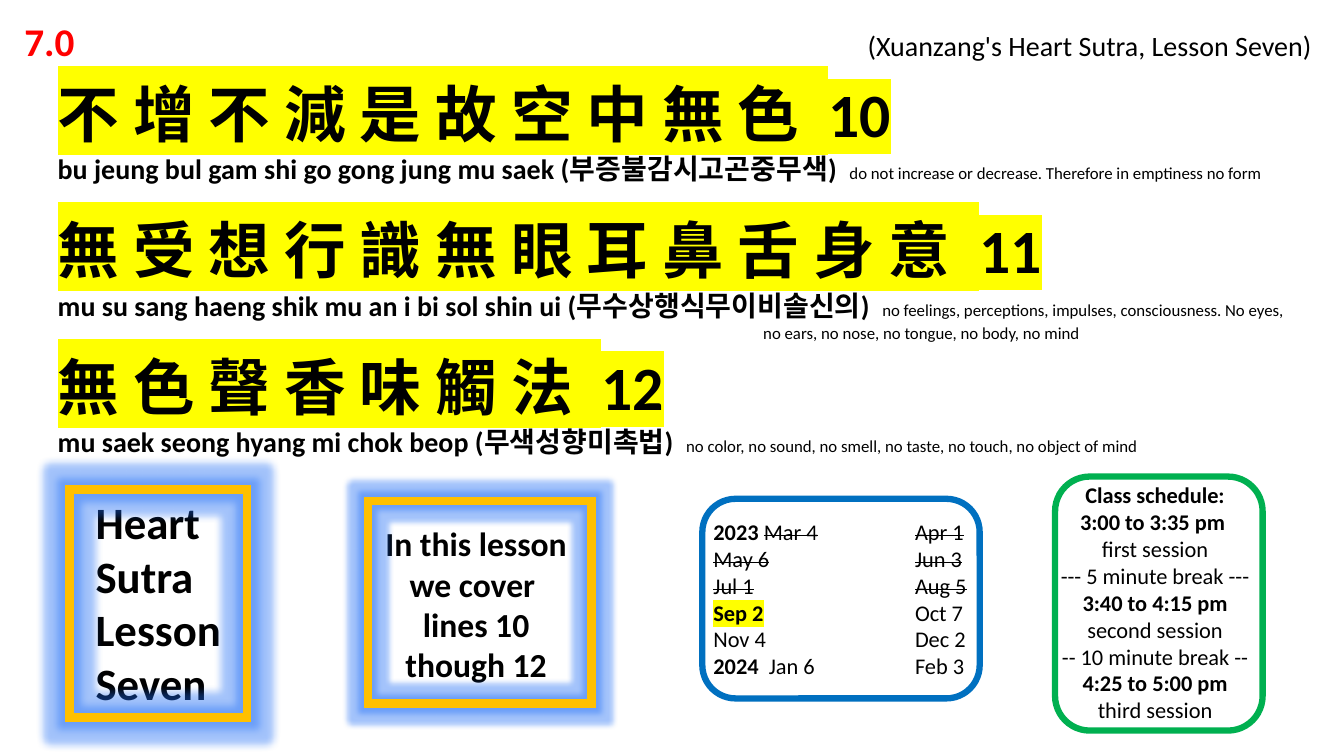
from dataclasses import dataclass
from typing import Optional

from lxml.etree import SubElement
from pptx import Presentation
from pptx.dml.color import RGBColor
from pptx.enum.shapes import MSO_SHAPE as Preset
from pptx.enum.text import MSO_ANCHOR as Anchor, MSO_AUTO_SIZE as AutoSize, PP_ALIGN as Align
from pptx.oxml.ns import qn
from pptx.util import Cm, Pt

COLORS = {"ink": "000000", "number": "FF0000", "marker": "FFFF00", "gold": "FFC000",
          "green": "00B050", "blue": "0070C0", "glow": "1A6AF5"}


@dataclass
class Box:
    left: float
    top: float
    width: float
    height: float

    def lengths(self) -> list:
        return [Cm(v) for v in (self.left, self.top, self.width, self.height)]


@dataclass
class Piece:
    text: str
    size: float
    bold: bool = False
    color: str = "ink"
    font: str = "Calibri"
    marked: bool = False
    struck: bool = False


@dataclass
class Line:
    pieces: list
    align: Align = Align.LEFT
    spacing: float = 1.0
    before: float = 0
    margin: Optional[float] = None
    tab: Optional[float] = None


@dataclass
class Verse:
    chinese: str
    sound: str
    hangul: str
    gloss: str
    gloss_end: str = ""
    before: float = 0


@dataclass
class Card:
    text_box: Box
    frame_box: Box
    preset: Preset
    color: str
    weight: float
    lines: list
    glow: float = 0


def add_piece(paragraph, piece: Piece) -> None:
    run = paragraph.add_run()
    run.text = piece.text
    font = run.font
    font.size, font.bold, font.name = Pt(piece.size), piece.bold, piece.font
    font.color.rgb = RGBColor.from_string(COLORS[piece.color])
    props = run._r.get_or_add_rPr()
    if piece.struck:
        props.set("strike", "sngStrike")
    if piece.marked:
        marker = SubElement(props, qn("a:highlight"))
        SubElement(marker, qn("a:srgbClr"), val=COLORS["marker"])
        props.find(qn("a:solidFill")).addnext(marker)


def write(frame, lines: list) -> None:
    frame.word_wrap = True
    frame.auto_size = AutoSize.NONE
    frame.vertical_anchor = Anchor.TOP
    for i, line in enumerate(lines):
        paragraph = frame.add_paragraph() if i else frame.paragraphs[0]
        paragraph.alignment = line.align
        paragraph.line_spacing = line.spacing
        paragraph.space_before, paragraph.space_after = Pt(line.before), Pt(0)
        props = paragraph._p.get_or_add_pPr()
        # An explicit indent cancels tab stops, so only body lines get one
        if line.margin is not None:
            props.set("marL", str(Cm(line.margin)))
            props.set("indent", "0")
            SubElement(props, qn("a:buNone"))
        if line.tab:
            props.set("defTabSz", str(Cm(line.tab)))
            stops = SubElement(props, qn("a:tabLst"))
            SubElement(stops, qn("a:tab"), pos=str(Cm(line.tab)), algn="l")
        for piece in line.pieces:
            add_piece(paragraph, piece)


def place(placeholder, box: Box, lines: list) -> None:
    (placeholder.left, placeholder.top,
     placeholder.width, placeholder.height) = box.lengths()
    write(placeholder.text_frame, lines)


def verse_lines(verse: Verse) -> list:
    lines = [
        Line([Piece(verse.chinese, 44, True, marked=True)],
             spacing=1.07, before=verse.before, margin=0),
        Line([Piece(verse.sound + " (", 20, True),
              Piece(verse.hangul, 20, True, font="Arial"),
              Piece(")  ", 20, True),
              Piece(verse.gloss, 12)], spacing=1.07, margin=0),
    ]
    if verse.gloss_end:
        lines.append(Line([Piece(verse.gloss_end, 12)], spacing=1.07, margin=17.78))
    return lines


def date_line(*pieces: Piece) -> Line:
    return Line(list(pieces), tab=5.08)


def past_dates(first: str, second: str) -> list:
    return [Piece(first, 16, struck=True), Piece("\t", 16), Piece(second, 16, struck=True)]


def centred(text: str, size: float, bold: bool) -> Line:
    return Line([Piece(text, size, bold)], Align.CENTER)


def add_card(slide, card: Card) -> None:
    write(slide.shapes.add_textbox(*card.text_box.lengths()).text_frame, card.lines)
    frame = slide.shapes.add_shape(card.preset, *card.frame_box.lengths())
    frame.fill.background()
    frame.line.color.rgb = RGBColor.from_string(COLORS[card.color])
    frame.line.width = Pt(card.weight)
    SubElement(frame.line._get_or_add_ln(), qn("a:miter"), lim="800000")
    frame.shadow.inherit = False
    if card.glow:
        effects = frame._element.spPr.find(qn("a:effectLst"))
        glow = SubElement(effects, qn("a:glow"), rad=str(Pt(card.glow)))
        tint = SubElement(glow, qn("a:srgbClr"), val=COLORS["glow"])
        SubElement(tint, qn("a:alpha"), val="40000")


VERSES = [
    Verse("不 增 不 減 是 故 空 中 無 色  10", "bu jeung bul gam shi go gong jung mu saek",
          "부증불감시고곤중무색", "do not increase or decrease. Therefore in emptiness no form"),
    Verse("無 受 想 行 識 無 眼 耳 鼻 舌 身 意  11", "mu su sang haeng shik mu an i bi sol shin ui",
          "무수상행식무이비솔신의", "no feelings, perceptions, impulses, consciousness. No eyes,",
          "no ears, no nose, no tongue, no body, no mind", before=15.2),
    Verse("無 色 聲 香 味 觸 法  12", "mu saek seong hyang mi chok beop",
          "무색성향미촉법", "no color, no sound, no smell, no taste, no touch, no object of mind"),
]

DATES = [
    date_line(Piece("2023 ", 16, True), *past_dates("Mar 4", "Apr 1")),
    date_line(*past_dates("May 6", "Jun 3")),
    date_line(*past_dates("Jul 1", "Aug 5")),
    date_line(Piece("Sep 2", 16, True, marked=True), Piece("\tOct 7", 16)),
    date_line(Piece("Nov 4\tDec 2", 16)),
    date_line(Piece("2024", 16, True), Piece("  Jan 6\tFeb 3", 16)),
]

SCHEDULE = [("Class schedule:", True), ("3:00 to 3:35 pm ", True), ("first session", False),
            ("--- 5 minute break ---", False), ("3:40 to 4:15 pm", True),
            ("second session", False), ("-- 10 minute break --", False),
            ("4:25 to 5:00 pm", True), ("third session", False)]

CARDS = [
    Card(Box(2.16, 12.34, 4.06, 5.74), Box(1.75, 12.34, 4.47, 5.74), Preset.RECTANGLE, "gold", 6,
         [Line([Piece(word, 32, True)]) for word in ("Heart", "Sutra", "Lesson", "Seven")],
         glow=11),
    Card(Box(25.81, 12.01, 6.6, 6.4), Box(26.59, 12.01, 5.23, 6.4), Preset.ROUNDED_RECTANGLE,
         "green", 4.5, [centred(text, 16, bold) for text, bold in SCHEDULE]),
    Card(Box(17.73, 12.93, 6.93, 4.34), Box(17.7, 12.57, 6.99, 5.03), Preset.ROUNDED_RECTANGLE,
         "blue", 4.5, DATES),
    Card(Box(9.27, 13.06, 5.46, 4.37), Box(9.27, 12.62, 5.64, 5.11), Preset.RECTANGLE, "gold", 6,
         [centred(text, 24, True) for text in ("In this lesson we cover ", "lines 10 though 12")],
         glow=8),
]


def main() -> None:
    deck = Presentation()
    deck.slide_width, deck.slide_height = Cm(33.87), Cm(19.05)
    slide = deck.slides.add_slide(deck.slide_layouts[1])

    # Lesson number and title on one line
    place(slide.shapes.title, Box(0.36, 0.23, 33.25, 1.47),
          [Line([Piece("7.0", 28, True, "number"),
                 Piece("\t(Xuanzang's Heart Sutra, Lesson Seven)", 20)],
                spacing=1.07, tab=21.25)])

    # Sutra verses
    place(slide.placeholders[1], Box(1.2, 1.65, 32.28, 10.92),
          [line for verse in VERSES for line in verse_lines(verse)])

    # Framed cards along the bottom
    for card in CARDS:
        add_card(slide, card)

    deck.save("out.pptx")


if __name__ == "__main__":
    main()
